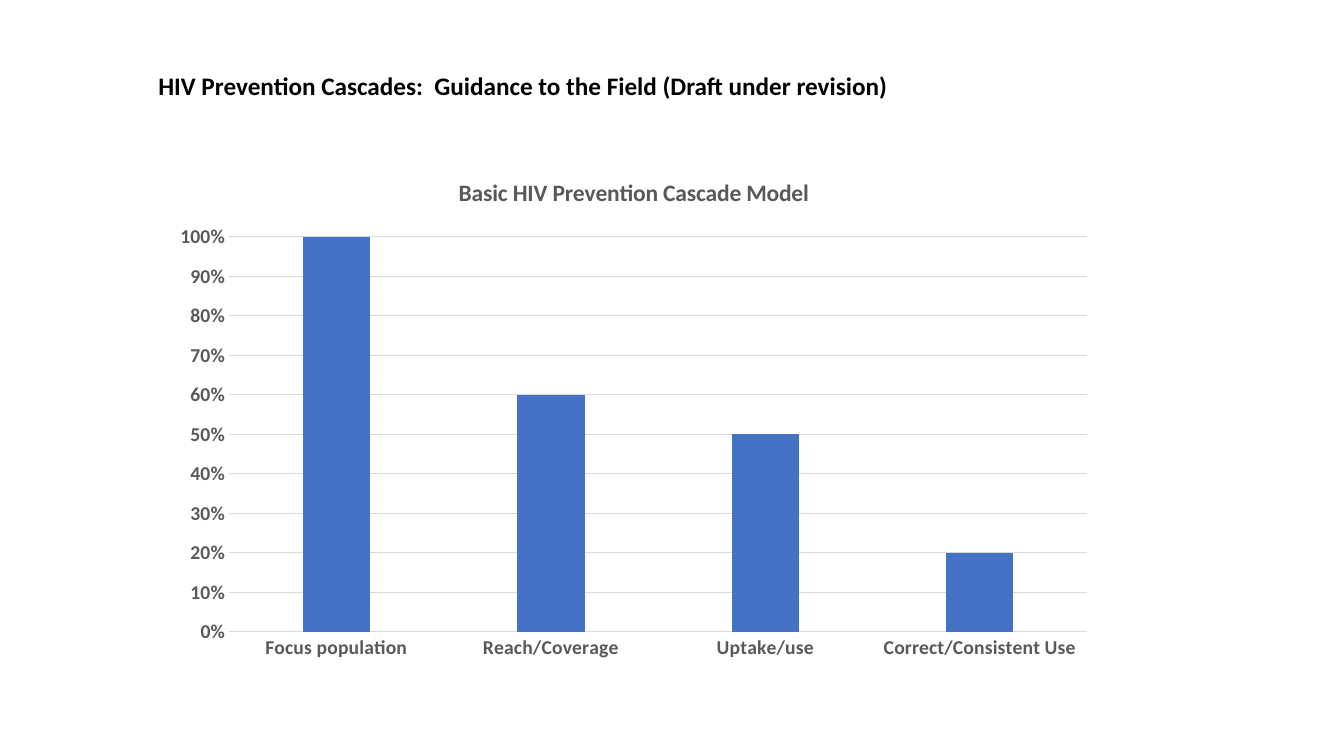
import pptx
import pptx.util
import pptx.chart.data
import pptx.dml.color
import pptx.enum.chart
import pptx.enum.text

Inches = pptx.util.Inches
Pt = pptx.util.Pt
COLORS = {"title": "000000", "label": "595959", "grid": "D9D9D9", "bar": "4472C4"}


def color(name):
    return pptx.dml.color.RGBColor.from_string(COLORS[name])


def format_font(font, size=14, shade="label", bold=True, face="Calibri"):
    font.size = Pt(size)
    font.bold = bold
    font.name = face
    font.color.rgb = color(shade)


def write_text(frame, text, **style):
    para = frame.paragraphs[0]
    para.alignment = style.pop("align", None)
    span = para.add_run()
    span.text = text
    format_font(span.font, **style)


class CascadePage:
    def __init__(self, deck):
        self.page = deck.slides.add_slide(deck.slide_layouts[5])

    def title(self, text, left, top, width, height):
        box = self.page.shapes.title
        box.left, box.top = Inches(left), Inches(top)
        box.width, box.height = Inches(width), Inches(height)
        frame = box.text_frame
        frame.word_wrap = False
        frame.auto_size = pptx.enum.text.MSO_AUTO_SIZE.SHAPE_TO_FIT_TEXT
        frame.vertical_anchor = pptx.enum.text.MSO_ANCHOR.TOP
        write_text(frame, text, size=18, shade="title", align=pptx.enum.text.PP_ALIGN.LEFT)

    def line(self, line):
        line.color.rgb = color("grid")
        line.width = Pt(0.75)

    def axis(self, axis):
        axis.major_tick_mark = axis.minor_tick_mark = pptx.enum.chart.XL_TICK_MARK.NONE
        format_font(axis.tick_labels.font)

    def column_chart(self, heading, shares, left, top, width, height):
        data = pptx.chart.data.CategoryChartData(number_format="0%")
        data.categories = list(shares)
        data.add_series("Series 1", list(shares.values()))
        chart = self.page.shapes.add_chart(
            pptx.enum.chart.XL_CHART_TYPE.COLUMN_CLUSTERED,
            Inches(left), Inches(top), Inches(width), Inches(height), data,
        ).chart
        format_font(chart.font, shade="title")
        chart.has_legend = False
        chart.has_title = True
        write_text(chart.chart_title.text_frame, heading, size=16.8)
        chart.chart_title.include_in_layout = False

        plot = chart.plots[0]
        plot.vary_by_categories = False
        plot.gap_width = 219
        plot.overlap = -27
        fill = plot.series[0].format.fill
        fill.solid()
        fill.fore_color.rgb = color("bar")

        self.axis(chart.category_axis)
        self.line(chart.category_axis.format.line)
        values = chart.value_axis
        self.axis(values)
        values.minimum_scale, values.maximum_scale, values.major_unit = 0, 1, 0.1
        values.tick_labels.number_format = "0%"
        values.tick_labels.number_format_is_linked = False
        values.format.line.fill.background()
        self.line(values.major_gridlines.format.line)


def main():
    deck = pptx.Presentation()
    deck.slide_width, deck.slide_height = Inches(13.33), Inches(7.5)
    page = CascadePage(deck)
    page.title(
        "HIV Prevention Cascades:  Guidance to the Field (Draft under revision)",
        1.47, 0.65, 7.5, 0.4,
    )
    shares = {
        "Focus population": 1,
        "Reach/Coverage": 0.6,
        "Uptake/use": 0.5,
        "Correct/Consistent Use": 0.2,
    }
    page.column_chart("Basic HIV Prevention Cascade Model", shares, 1.6, 1.55, 9.37, 5.1)
    deck.save("out.pptx")


if __name__ == "__main__":
    main()
